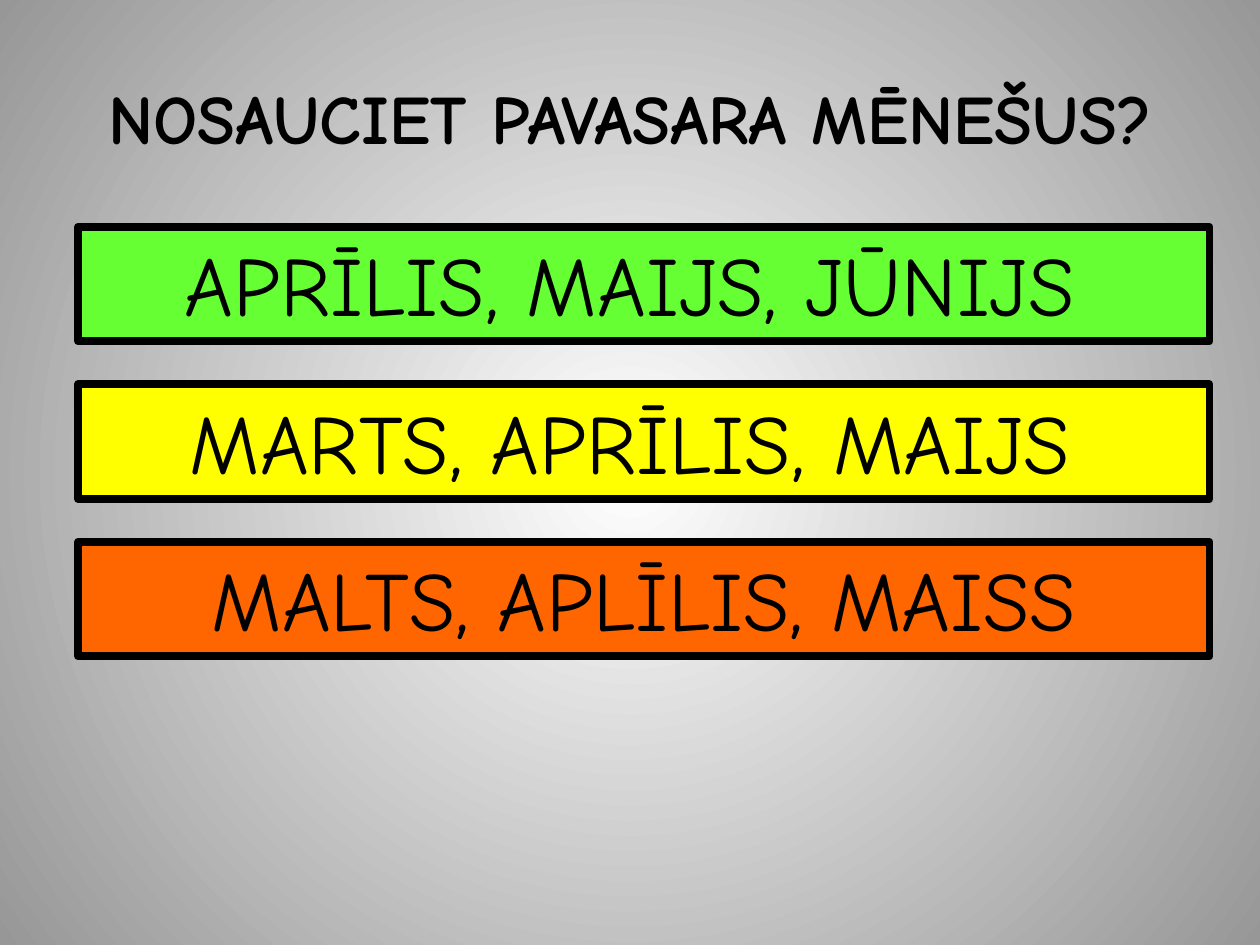
import pptx
import pptx.util
import pptx.dml.color
import pptx.enum.shapes
import pptx.enum.text
import pptx.oxml
import pptx.oxml.ns

Pt = pptx.util.Pt
RGB = pptx.dml.color.RGBColor.from_string
Anchor = pptx.enum.text.MSO_ANCHOR

TITLE = "NOSAUCIET PAVASARA MĒNEŠUS?"
ANSWERS = [
    ("APRĪLIS, MAIJS, JŪNIJS ", "66FF33"),
    ("MARTS, APRĪLIS, MAIJS ", "FFFF00"),
    ("MALTS, APLĪLIS, MAISS", "FF6600"),
]
THEME = {
    "font": "Comic Neue",
    "ink": "000000",
    "glow": ("FFFFFF", "979797"),
    "title": 39.6,
    "answer": 48,
    "line": 4.5,
}
LEFT, TOP, WIDTH, HEIGHT, STEP = 44.64, 129.6, 646.56, 65.52, 90


def paint(slide):
    fill = slide.background.fill
    fill.gradient()
    for stop, color in zip(fill.gradient_stops, THEME["glow"]):
        stop.color.rgb = RGB(color)
    grad = next(slide.element.iter(pptx.oxml.ns.qn("a:gradFill")))
    grad.remove(grad.find(pptx.oxml.ns.qn("a:lin")))
    grad.append(pptx.oxml.parse_xml(
        f'<a:path {pptx.oxml.ns.nsdecls("a")} path="circle">'
        '<a:fillToRect l="50000" t="50000" r="50000" b="50000"/></a:path>'))


def write(shape, text, size, anchor, bold=False):
    frame = shape.text_frame
    frame.text = text
    frame.word_wrap = True
    frame.vertical_anchor = anchor
    para = frame.paragraphs[0]
    para.alignment = pptx.enum.text.PP_ALIGN.CENTER
    font = para.runs[0].font
    font.name = THEME["font"]
    font.size = Pt(size)
    font.bold = bold
    font.color.rgb = RGB(THEME["ink"])


def add_bar(slide, row, text, color):
    bar = slide.shapes.add_shape(
        pptx.enum.shapes.MSO_SHAPE.RECTANGLE,
        Pt(LEFT), Pt(TOP + row * STEP), Pt(WIDTH), Pt(HEIGHT))
    bar.shadow.inherit = False
    bar.fill.solid()
    bar.fill.fore_color.rgb = RGB(color)
    bar.line.color.rgb = RGB(THEME["ink"])
    bar.line.width = Pt(THEME["line"])
    write(bar, text, THEME["answer"], Anchor.TOP)
    bar.text_frame.auto_size = pptx.enum.text.MSO_AUTO_SIZE.SHAPE_TO_FIT_TEXT


def main():
    deck = pptx.Presentation()
    deck.slide_width, deck.slide_height = Pt(720), Pt(540)
    slide = deck.slides.add_slide(deck.slide_layouts[6])
    paint(slide)
    title = slide.shapes.add_textbox(Pt(36), Pt(21.6), Pt(648), Pt(90))
    write(title, TITLE, THEME["title"], Anchor.MIDDLE, bold=True)
    for row, (text, color) in enumerate(ANSWERS):
        add_bar(slide, row, text, color)
    deck.save("out.pptx")


if __name__ == "__main__":
    main()
